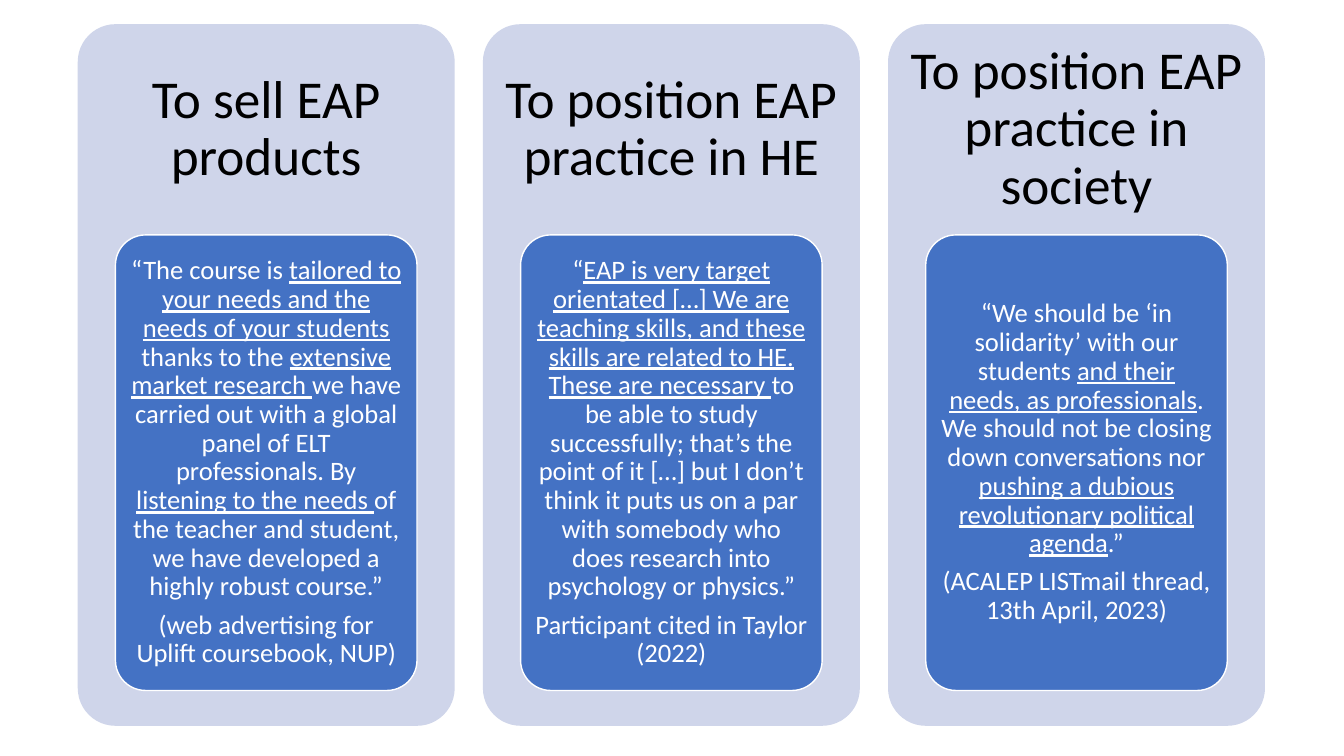
from dataclasses import dataclass

from pptx import Presentation
from pptx.dml.color import RGBColor
from pptx.enum.shapes import MSO_SHAPE
from pptx.enum.text import MSO_ANCHOR, PP_ALIGN
from pptx.shapes.autoshape import Shape
from pptx.slide import Slide
from pptx.text.text import TextFrame, _Paragraph
from pptx.util import Cm, Pt

COLORS = {"panel": "CFD5EA", "quote": "4472C4", "outline": "FFFFFF",
          "heading_text": "000000", "quote_text": "FFFFFF"}
FONT = "Calibri"

TOP = 0.61
FIRST_LEFT = 1.96
PANEL_WIDTH, PANEL_HEIGHT = 9.5, 17.68
PANEL_PITCH = 10.21
HEADING_HEIGHT = 5.31
QUOTE_WIDTH, QUOTE_HEIGHT = 7.6, 11.48
QUOTE_INDENT = (PANEL_WIDTH - QUOTE_WIDTH) / 2


@dataclass(frozen=True)
class Purpose:
    """A column; its quote alternates plain and underlined spans."""
    heading: str
    quote: tuple[str, ...]
    citation: str


PURPOSES = (
    Purpose(
        "To sell EAP products",
        ("“The course is ",
         "tailored to your needs and the needs of your students ",
         "thanks to the ",
         "extensive market research ",
         "we have carried out with a global panel of ELT professionals. By ",
         "listening to the needs ",
         "of the teacher and student, we have developed a highly robust course.”"),
        "(web advertising for Uplift coursebook, NUP)",
    ),
    Purpose(
        "To position EAP practice in HE",
        ("“",
         "EAP is very target orientated […] We are teaching skills, and these "
         "skills are related to HE. These are necessary ",
         "to be able to study successfully; that’s the point of it […] but I "
         "don’t think it puts us on a par with somebody who does research into "
         "psychology or physics.”"),
        "Participant cited in Taylor (2022)",
    ),
    Purpose(
        "To position EAP practice in society",
        ("“We should be ‘in solidarity’ with our students ",
         "and their needs, as professionals",
         ". We should not be closing down conversations nor ",
         "pushing a dubious revolutionary political agenda",
         ".”"),
        "(ACALEP LISTmail thread, 13th April, 2023)",
    ),
)


def color(name: str) -> RGBColor:
    return RGBColor.from_string(COLORS[name])


def add_card(slide: Slide, left: float, top: float, width: float,
             height: float, fill: str) -> Shape:
    card = slide.shapes.add_shape(MSO_SHAPE.ROUNDED_RECTANGLE,
                                  Cm(left), Cm(top), Cm(width), Cm(height))
    card.adjustments[0] = 0.1
    card.shadow.inherit = False
    card.fill.solid()
    card.fill.fore_color.rgb = color(fill)
    card.line.fill.background()
    return card


def format_frame(frame: TextFrame, side: float, end: float) -> None:
    settings = {"word_wrap": True, "vertical_anchor": MSO_ANCHOR.MIDDLE,
                "margin_left": Cm(side), "margin_right": Cm(side),
                "margin_top": Cm(end), "margin_bottom": Cm(end)}
    for attribute, value in settings.items():
        setattr(frame, attribute, value)


def write_spans(paragraph: _Paragraph, spans: tuple[str, ...], size: int,
                text_color: str) -> None:
    """Fill a centred paragraph, underlining every second span."""
    paragraph.alignment = PP_ALIGN.CENTER
    paragraph.line_spacing = 0.9
    for index, span in enumerate(spans):
        run = paragraph.add_run()
        run.text = span
        run.font.color.rgb = color(text_color)
        settings = {"name": FONT, "size": Pt(size), "underline": index % 2 == 1}
        for attribute, value in settings.items():
            setattr(run.font, attribute, value)


def add_purpose(slide: Slide, purpose: Purpose, left: float) -> None:
    add_card(slide, left, TOP, PANEL_WIDTH, PANEL_HEIGHT, "panel")

    heading = slide.shapes.add_textbox(Cm(left), Cm(TOP), Cm(PANEL_WIDTH),
                                       Cm(HEADING_HEIGHT)).text_frame
    format_frame(heading, 0.4, 0.4)
    write_spans(heading.paragraphs[0], (purpose.heading,), 38, "heading_text")

    quote_card = add_card(slide, left + QUOTE_INDENT, TOP + HEADING_HEIGHT,
                          QUOTE_WIDTH, QUOTE_HEIGHT, "quote")
    quote_card.line.color.rgb = color("outline")
    quote_card.line.width = Pt(1)
    quote = quote_card.text_frame
    format_frame(quote, 0.13, 0.1)
    write_spans(quote.paragraphs[0], purpose.quote, 19, "quote_text")
    citation = quote.add_paragraph()
    citation.space_before = Pt(6.7)
    write_spans(citation, (purpose.citation,), 19, "quote_text")


def main() -> None:
    presentation = Presentation()
    presentation.slide_width = Cm(33.87)
    presentation.slide_height = Cm(19.05)
    slide = presentation.slides.add_slide(presentation.slide_layouts[6])
    for column, purpose in enumerate(PURPOSES):
        add_purpose(slide, purpose, FIRST_LEFT + column * PANEL_PITCH)
    presentation.save("out.pptx")


if __name__ == "__main__":
    main()
